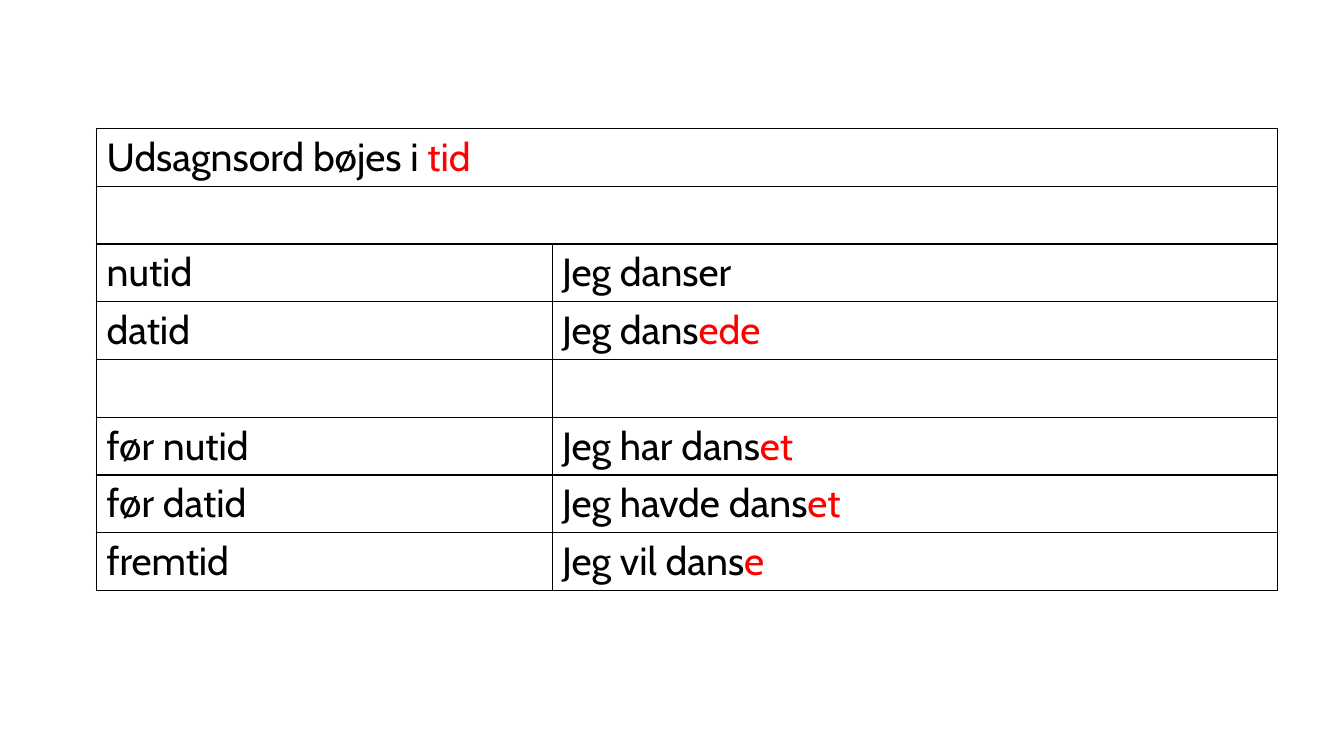
from lxml import etree
from pptx import Presentation
from pptx.dml.color import RGBColor
from pptx.enum.text import MSO_ANCHOR
from pptx.oxml.ns import qn
from pptx.util import Pt

TOP = MSO_ANCHOR.TOP
COLOURS = {"text": "000000", "ending": "FF0000", "border": "000000"}
BORDER_SIDES = ("a:lnL", "a:lnR", "a:lnT", "a:lnB")
TEXT_FORMAT = {"name": "Cabin", "size": Pt(28), "bold": False}
CELL_FORMAT = {
    "margin_left": Pt(7.2),
    "margin_right": Pt(7.2),
    "margin_top": Pt(3.6),
    "margin_bottom": Pt(3.6),
    "vertical_anchor": TOP,
}
TABLE_FORMAT = {"first_row": False, "horz_banding": False}

COLUMN_WIDTHS = (325.4, 518.4)
ROW_HEIGHT = 41.25
VERB_TENSES = [
    [("Udsagnsord bøjes i ", "tid")],
    [()],
    [("nutid",), ("Jeg danser",)],
    [("datid",), ("Jeg dans", "ede")],
    [(), ()],
    [("før nutid",), ("Jeg har dans", "et")],
    [("før datid",), ("Jeg havde dans", "et")],
    [("fremtid",), ("Jeg vil dans", "e")],
]


def apply_format(target, values):
    for name, value in values.items():
        setattr(target, name, value)


class SlideBuilder:
    def __init__(self, slide, colours):
        self.slide = slide
        self.colours = colours

    def add_text(self, cell, parts):
        paragraph = cell.text_frame.paragraphs[0]
        for text, colour in zip(parts, ("text", "ending")):
            run = paragraph.add_run()
            run.text = text
            apply_format(run.font, TEXT_FORMAT)
            run.font.color.rgb = RGBColor.from_string(self.colours[colour])

    def add_borders(self, cell, width):
        properties = cell._tc.get_or_add_tcPr()
        for position, side in enumerate(BORDER_SIDES):
            line = etree.Element(qn(side), w=str(Pt(width)))
            fill = etree.SubElement(line, qn("a:solidFill"))
            etree.SubElement(fill, qn("a:srgbClr"), val=self.colours["border"])
            properties.insert(position, line)

    def add_table(self, left, top, rows, column_widths, row_height):
        shape = self.slide.shapes.add_table(
            len(rows), len(column_widths), Pt(left), Pt(top),
            Pt(sum(column_widths)), Pt(row_height * len(rows)),
        )
        table = shape.table
        apply_format(table, TABLE_FORMAT)
        for column, width in zip(table.columns, column_widths):
            column.width = Pt(width)
        for row in table.rows:
            row.height = Pt(row_height)
        for cell in table.iter_cells():
            apply_format(cell, CELL_FORMAT)
            cell.fill.background()
            self.add_borders(cell, 1)
        for row_index, row in enumerate(rows):
            if len(row) == 1:
                last_cell = table.cell(row_index, len(column_widths) - 1)
                table.cell(row_index, 0).merge(last_cell)
            for column_index, parts in enumerate(row):
                self.add_text(table.cell(row_index, column_index), parts)


def main():
    presentation = Presentation()
    presentation.slide_width = Pt(960)
    presentation.slide_height = Pt(540)
    slide = presentation.slides.add_slide(presentation.slide_layouts[6])
    builder = SlideBuilder(slide, COLOURS)
    builder.add_table(69, 91.8, VERB_TENSES, COLUMN_WIDTHS, ROW_HEIGHT)
    presentation.save("out.pptx")


if __name__ == "__main__":
    main()
